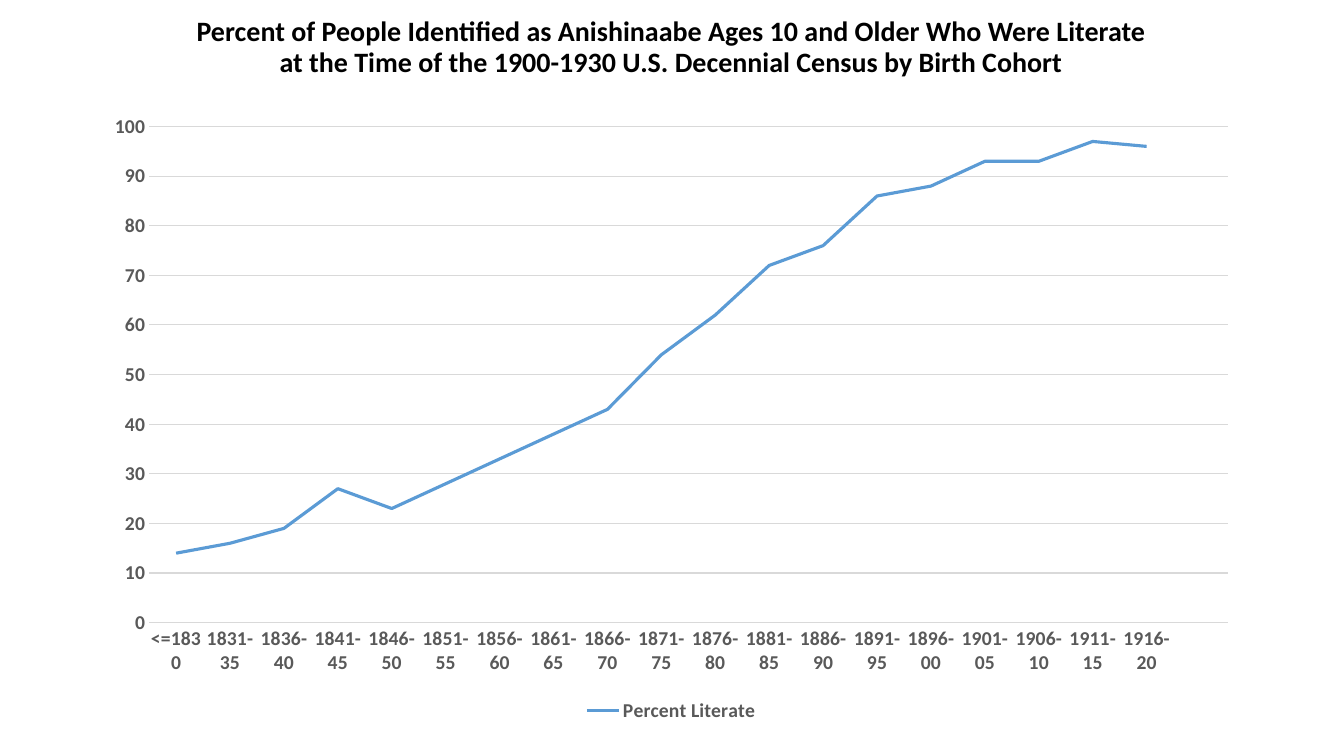
from pptx import Presentation
from pptx.chart.data import CategoryChartData
from pptx.dml.color import RGBColor
from pptx.enum.chart import XL_CHART_TYPE as ChartType, XL_LEGEND_POSITION as LegendPosition
from pptx.enum.chart import XL_MARKER_STYLE as MarkerStyle, XL_TICK_MARK as TickMark
from pptx.enum.text import MSO_ANCHOR as Anchor, MSO_AUTO_SIZE as AutoSize, PP_ALIGN as Align
from pptx.util import Cm, Pt

HEADING = [
    "Percent of People Identified as Anishinaabe Ages 10 and Older Who Were Literate",
    "at the Time of the 1900-1930 U.S. Decennial Census by Birth Cohort",
]
SERIES_NAME = "Percent Literate"
LITERACY = [
    ("<=1830", 14), ("1831-35", 16), ("1836-40", 19), ("1841-45", 27),
    ("1846-50", 23), ("1851-55", 28), ("1856-60", 33), ("1861-65", 38),
    ("1866-70", 43), ("1871-75", 54), ("1876-80", 62), ("1881-85", 72),
    ("1886-90", 76), ("1891-95", 86), ("1896-00", 88), ("1901-05", 93),
    ("1906-10", 93), ("1911-15", 97), ("1916-20", 96),
    ("", None),  # the axis keeps one empty slot at its right end
]
COLORS = {"heading": "000000", "label": "595959", "rule": "D9D9D9", "literate": "5B9BD5"}
FONT = "Calibri"
LEFT, WIDTH = Cm(2.31), Cm(29.21)


def style_font(font, size, color):
    font.name = FONT
    font.size = Pt(size)
    font.bold = True
    font.color.rgb = RGBColor.from_string(COLORS[color])


def style_line(line, width, color):
    line.width = Pt(width)
    line.color.rgb = RGBColor.from_string(COLORS[color])


def add_heading(slide):
    heading = slide.shapes.title
    heading.left, heading.top, heading.width, heading.height = LEFT, Cm(0.3), WIDTH, Cm(1.8)
    frame = heading.text_frame
    frame.text = "\n".join(HEADING)
    frame.word_wrap = True
    frame.auto_size = AutoSize.SHAPE_TO_FIT_TEXT
    frame.vertical_anchor = Anchor.BOTTOM
    for paragraph in frame.paragraphs:
        paragraph.alignment = Align.CENTER
        paragraph.line_spacing = 0.9
        paragraph.space_before = Pt(0)
        style_font(paragraph.runs[0].font, 20, "heading")


def add_literacy_chart(slide):
    cohorts, percents = zip(*LITERACY)
    data = CategoryChartData()
    data.categories = cohorts
    data.add_series(SERIES_NAME, percents)
    chart = slide.shapes.add_chart(
        ChartType.LINE, LEFT, Cm(2.57), WIDTH, Cm(15.75), data).chart
    chart.has_title = False
    style_font(chart.font, 14, "label")

    chart.has_legend = True
    chart.legend.position = LegendPosition.BOTTOM
    chart.legend.include_in_layout = False
    style_font(chart.legend.font, 14, "label")

    for axis in (chart.category_axis, chart.value_axis):
        axis.major_tick_mark = axis.minor_tick_mark = TickMark.NONE
        style_font(axis.tick_labels.font, 14, "label")
    style_line(chart.category_axis.format.line, 0.75, "rule")

    percent_axis = chart.value_axis
    percent_axis.minimum_scale, percent_axis.maximum_scale = 0, 100
    percent_axis.major_unit = 10
    percent_axis.format.line.fill.background()
    percent_axis.has_major_gridlines = True
    style_line(percent_axis.major_gridlines.format.line, 0.75, "rule")

    plot = chart.plots[0]
    plot.vary_by_categories = False
    literate = plot.series[0]
    literate.smooth = False
    literate.marker.style = MarkerStyle.NONE
    style_line(literate.format.line, 2.25, "literate")


def main():
    deck = Presentation()
    deck.slide_width, deck.slide_height = Cm(33.87), Cm(19.05)
    slide = deck.slides.add_slide(deck.slide_layouts.get_by_name("Title Only"))
    add_literacy_chart(slide)
    add_heading(slide)
    deck.save("out.pptx")


if __name__ == "__main__":
    main()
